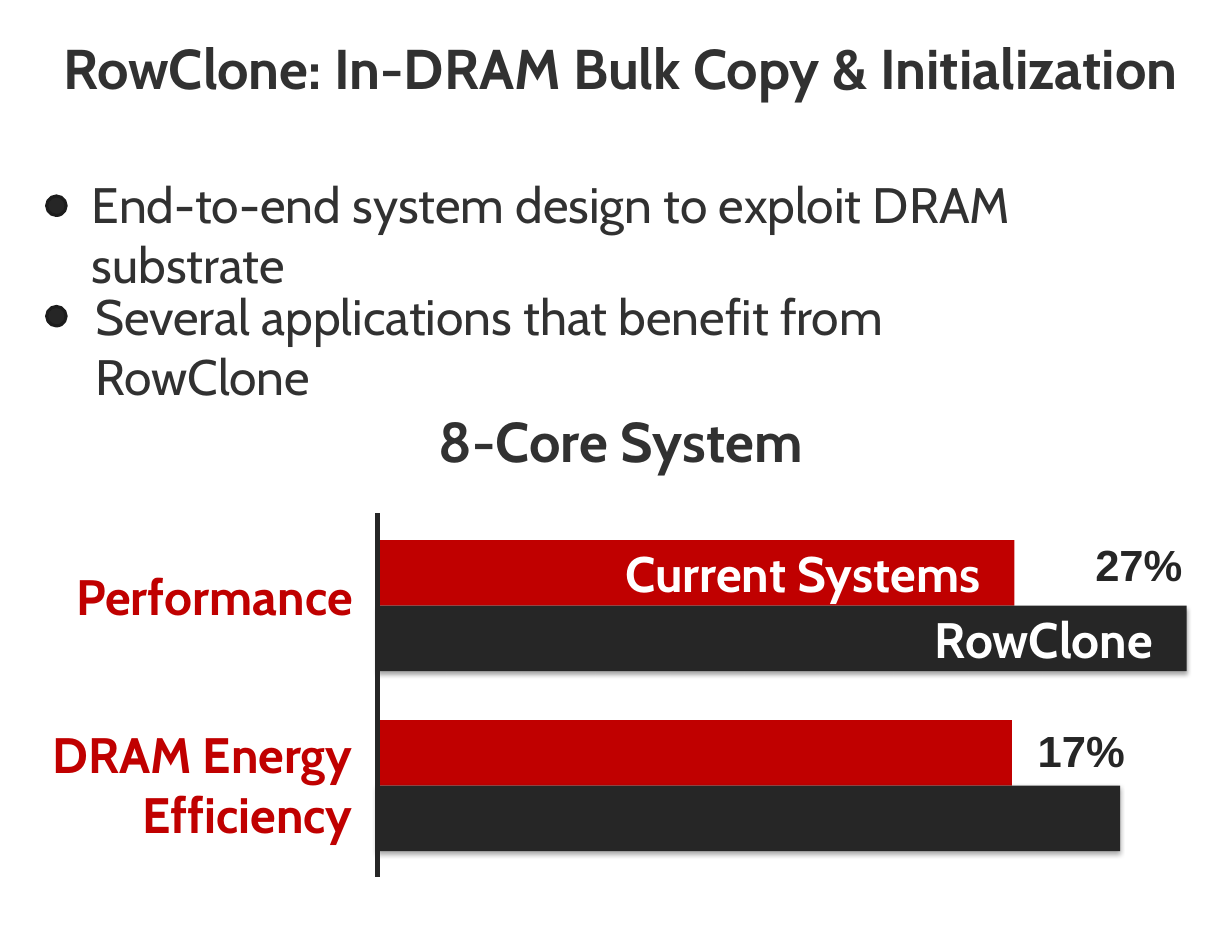
from dataclasses import dataclass

from lxml.etree import SubElement
from pptx import Presentation
from pptx.dml.color import RGBColor
from pptx.enum.shapes import MSO_CONNECTOR, MSO_SHAPE
from pptx.enum.text import MSO_ANCHOR, PP_ALIGN
from pptx.oxml.ns import qn
from pptx.slide import Slide
from pptx.text.text import TextFrame
from pptx.util import Pt

RED = RGBColor(0xC0, 0x00, 0x00)
CHARCOAL = RGBColor(0x26, 0x26, 0x26)
GRAY = RGBColor(0x31, 0x31, 0x31)
BULLET_EDGE = RGBColor(0x1C, 0x1C, 0x1C)
WHITE = RGBColor(0xFF, 0xFF, 0xFF)

AXIS_LEFT = 242.6
BAR_HEIGHT = 42.1
BULLET_SIZE = 12.5


@dataclass(frozen=True)
class Style:
    size: float
    color: RGBColor
    bold: bool = True
    font: str = "Cabin"
    align: PP_ALIGN = PP_ALIGN.LEFT


HEADING = Style(36, GRAY, align=PP_ALIGN.CENTER)
BODY = Style(32, GRAY, bold=False)
CATEGORY = Style(32, RED, align=PP_ALIGN.RIGHT)
BAR_NAME = Style(32, WHITE, align=PP_ALIGN.RIGHT)
PERCENT = Style(28, CHARCOAL, font="Arial")


@dataclass(frozen=True)
class Label:
    lines: tuple[str, ...]
    left: float
    top: float
    width: float
    height: float
    style: Style
    wrap: bool = False


@dataclass(frozen=True)
class BarPair:
    top: float
    current_width: float
    rowclone_width: float
    current_name: str = ""
    rowclone_name: str = ""


@dataclass(frozen=True)
class Bullet:
    text: str
    left: float
    top: float
    width: float
    dot_top: float


LABELS = (
    Label(("RowClone: In-DRAM Bulk Copy & Initialization",), 24, 18, 750, 51, HEADING, True),
    Label(("8-Core System",), 24, 258, 750, 51, HEADING, True),
    Label(("Performance",), 41, 360, 193, 46, CATEGORY),
    Label(("DRAM Energy", "Efficiency"), 24, 462, 210, 85, CATEGORY),
    Label(("27%",), 697, 342, 71, 41, PERCENT),
    Label(("17%",), 660, 462, 71, 41, PERCENT),
)
BAR_PAIRS = (
    BarPair(347.2, 409.5, 520.3, "Current Systems", "RowClone"),
    BarPair(463, 408, 477.5),
)
BULLETS = (
    Bullet("End-to-end system design to exploit DRAM substrate", 52, 108, 723, 126),
    Bullet("Several applications that benefit from RowClone", 54, 180, 658, 197),
)


def write_lines(frame: TextFrame, lines: tuple[str, ...], style: Style) -> None:
    for index, line in enumerate(lines):
        para = frame.paragraphs[0] if index == 0 else frame.add_paragraph()
        para.alignment = style.align
        span = para.add_run()
        span.text = line
        span.font.name = style.font
        span.font.size = Pt(style.size)
        span.font.bold = style.bold
        span.font.color.rgb = style.color


def add_label(page: Slide, label: Label) -> None:
    box = page.shapes.add_textbox(
        Pt(label.left), Pt(label.top), Pt(label.width), Pt(label.height))
    box.text_frame.word_wrap = label.wrap
    write_lines(box.text_frame, label.lines, label.style)


def add_bar(page: Slide, top: float, width: float, color: RGBColor, name: str,
            shadowed: bool = False) -> None:
    bar = page.shapes.add_shape(
        MSO_SHAPE.RECTANGLE, Pt(AXIS_LEFT), Pt(top), Pt(width), Pt(BAR_HEIGHT))
    bar.fill.solid()
    bar.fill.fore_color.rgb = color
    bar.line.fill.background()
    bar.shadow.inherit = False
    if shadowed:
        effects = bar.element.spPr.find(qn("a:effectLst"))
        shadow = SubElement(effects, qn("a:outerShdw"), blurRad=str(Pt(3.1)),
                            dist=str(Pt(1.8)), dir="5400000", rotWithShape="0")
        shade = SubElement(shadow, qn("a:srgbClr"), val="000000")
        SubElement(shade, qn("a:alpha"), val="35000")
    if name:
        frame = bar.text_frame
        frame.margin_right = Pt(21.6)
        frame.vertical_anchor = MSO_ANCHOR.MIDDLE
        write_lines(frame, (name,), BAR_NAME)


def add_axis(page: Slide) -> None:
    axis = page.shapes.add_connector(
        MSO_CONNECTOR.STRAIGHT, Pt(AXIS_LEFT), Pt(330), Pt(AXIS_LEFT), Pt(564))
    axis.line.color.rgb = CHARCOAL
    axis.line.width = Pt(3)
    SubElement(axis.element.spPr, qn("a:effectLst"))


def add_bullet(page: Slide, bullet: Bullet) -> None:
    add_label(page, Label((bullet.text,), bullet.left, bullet.top, bullet.width, 46, BODY, True))
    dot = page.shapes.add_shape(
        MSO_SHAPE.OVAL, Pt(30), Pt(bullet.dot_top), Pt(BULLET_SIZE), Pt(BULLET_SIZE))
    dot.shadow.inherit = False
    dot.fill.solid()
    dot.fill.fore_color.rgb = CHARCOAL
    dot.line.color.rgb = BULLET_EDGE
    dot.line.width = Pt(2)


def main() -> None:
    deck = Presentation()
    deck.slide_width, deck.slide_height = Pt(792), Pt(612)
    page = deck.slides.add_slide(deck.slide_layouts[6])

    # Bars and their axis
    for pair in BAR_PAIRS:
        add_bar(page, pair.top, pair.current_width, RED, pair.current_name)
        add_bar(page, pair.top + BAR_HEIGHT, pair.rowclone_width, CHARCOAL,
                pair.rowclone_name, shadowed=True)
    add_axis(page)

    # Headings, categories and gains
    for label in LABELS:
        add_label(page, label)

    # Bulleted points
    for bullet in BULLETS:
        add_bullet(page, bullet)

    deck.save("out.pptx")


if __name__ == "__main__":
    main()
